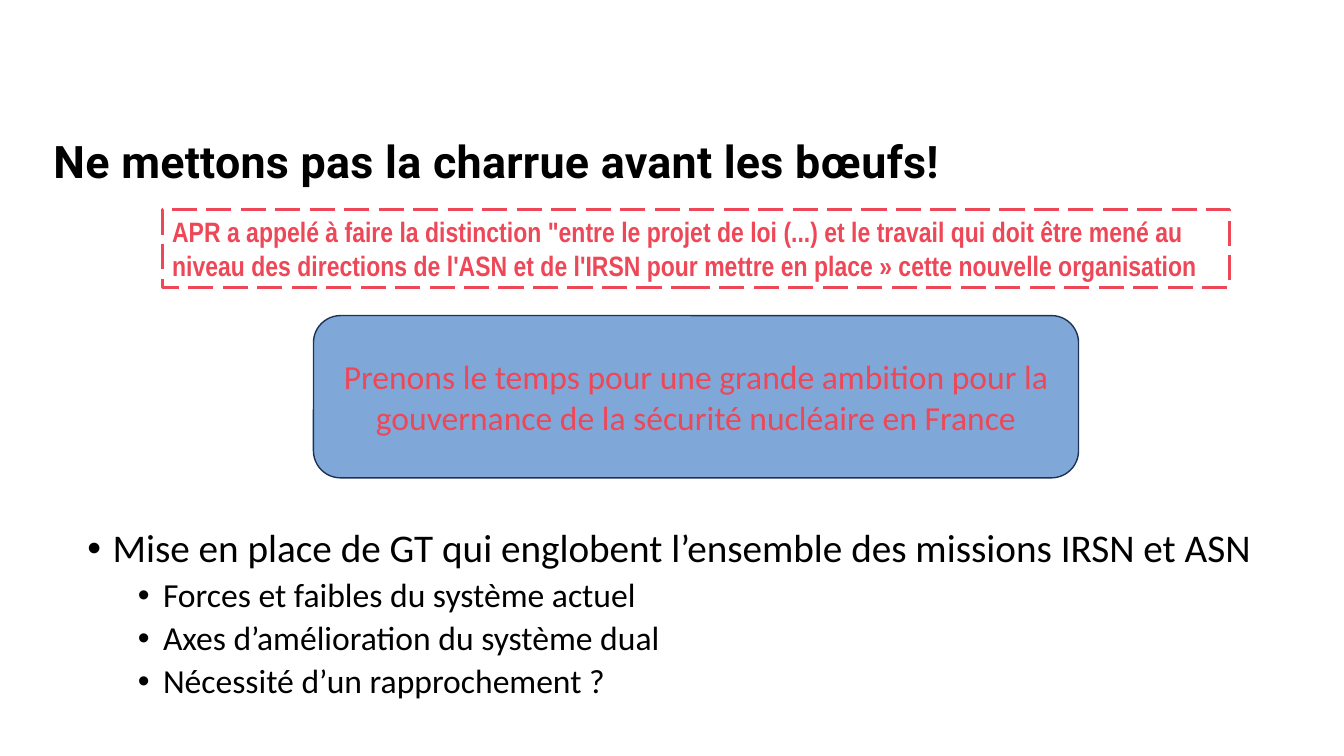
"""Build the slide on the future of nuclear safety governance."""
from lxml.etree import SubElement
from pptx import Presentation
from pptx.dml.color import RGBColor
from pptx.enum.dml import MSO_LINE
from pptx.enum.shapes import MSO_SHAPE
from pptx.enum.text import MSO_ANCHOR, MSO_AUTO_SIZE, PP_ALIGN
from pptx.oxml.ns import qn
from pptx.util import Pt

COLORS = {"ink": "000000", "red": "EE4757", "blue": "7FA8D9", "navy": "1E3256"}
TITLE = "Ne mettons pas la charrue avant les bœufs!"
QUOTE = (
    "APR a appelé à faire la distinction \"entre le projet de loi (...) et le "
    "travail qui doit être mené au niveau des directions de l'ASN et de l'IRSN "
    "pour mettre en place » cette nouvelle organisation"
)
CLAIM = (
    "Prenons le temps pour une grande ambition pour la gouvernance "
    "de la sécurité nucléaire en France"
)
GOALS = [
    (0, "Mise en place de GT qui englobent l’ensemble des missions IRSN et ASN"),
    (1, "Forces et faibles du système actuel"),
    (1, "Axes d’amélioration du système dual"),
    (1, "Nécessité d’un rapprochement ?"),
]


def color(name):
    """Return a named colour."""
    return RGBColor.from_string(COLORS[name])


def style(para, font, size, ink, bold=False):
    """Format the runs of a paragraph."""
    for run in para.runs:
        run.font.name = font
        run.font.size = Pt(size)
        run.font.bold = bold
        run.font.color.rgb = color(ink)


def add_title(slide, text, left, top, width, height):
    """Place and format the title."""
    title = slide.shapes.title
    title.left, title.top = Pt(left), Pt(top)
    title.width, title.height = Pt(width), Pt(height)
    frame = title.text_frame
    frame.text = text
    frame.word_wrap = True
    frame.auto_size = MSO_AUTO_SIZE.NONE
    frame.vertical_anchor = MSO_ANCHOR.TOP
    frame.margin_left = frame.margin_right = Pt(0)
    frame.margin_top = frame.margin_bottom = Pt(0)
    para = frame.paragraphs[0]
    para.alignment = PP_ALIGN.LEFT
    para.line_spacing = Pt(43)
    style(para, "Roboto", 32, "ink", True)
    para.runs[0].font._element.set("spc", "20")


def add_panel(slide, kind, box, text, line, weight, fill=None):
    """Add an outlined shape with text and return it."""
    panel = slide.shapes.add_shape(kind, *map(Pt, box))
    panel.shadow.inherit = False
    panel.line.color.rgb = color(line)
    panel.line.width = Pt(weight)
    if fill:
        panel.fill.solid()
        panel.fill.fore_color.rgb = color(fill)
    else:
        panel.fill.background()
    panel.text_frame.word_wrap = True
    panel.text_frame.text = text
    return panel


def add_list(slide, items, left, top, width, height):
    """Add a bullet list with two levels."""
    box = slide.shapes.add_textbox(Pt(left), Pt(top), Pt(width), Pt(height))
    frame = box.text_frame
    frame.word_wrap = True
    for index, (level, text) in enumerate(items):
        para = frame.add_paragraph() if index else frame.paragraphs[0]
        para.text = text
        para.level = level
        para.line_spacing = 0.9
        para.space_before = Pt(5 if index else 0)
        props = para._p.get_or_add_pPr()
        props.set("marL", str(Pt(18 + 36 * level)))
        props.set("indent", str(Pt(-18)))
        SubElement(props, qn("a:buFont"), typeface="Arial")
        SubElement(props, qn("a:buChar"), char="•")
        style(para, "Calibri", 28 - 4 * level, "ink")


def main():
    """Build and save the slide."""
    deck = Presentation()
    deck.slide_width, deck.slide_height = Pt(960), Pt(540)
    slide = deck.slides.add_slide(deck.slide_layouts[5])
    add_title(slide, TITLE, 38.2, 90.7, 883.4, 74.9)
    claim = add_panel(slide, MSO_SHAPE.ROUNDED_RECTANGLE,
                      (223.9, 225.4, 546.5, 115.9), CLAIM, "navy", 1, "blue")
    claim.text_frame.vertical_anchor = MSO_ANCHOR.MIDDLE
    claim.text_frame.paragraphs[0].alignment = PP_ALIGN.CENTER
    style(claim.text_frame.paragraphs[0], "Calibri", 24, "red")
    add_list(slide, GOALS, 55.4, 374.4, 883.4, 146.9)
    quote = add_panel(slide, MSO_SHAPE.RECTANGLE,
                      (115.9, 149.8, 762.5, 55.4), QUOTE, "red", 2.25)
    quote.line.dash_style = MSO_LINE.LONG_DASH
    quote.text_frame.vertical_anchor = MSO_ANCHOR.TOP
    quote.text_frame.auto_size = MSO_AUTO_SIZE.SHAPE_TO_FIT_TEXT
    quote.text_frame.paragraphs[0].alignment = PP_ALIGN.LEFT
    style(quote.text_frame.paragraphs[0], "Arial Narrow", 20, "red", True)
    deck.save("out.pptx")


if __name__ == "__main__":
    main()
